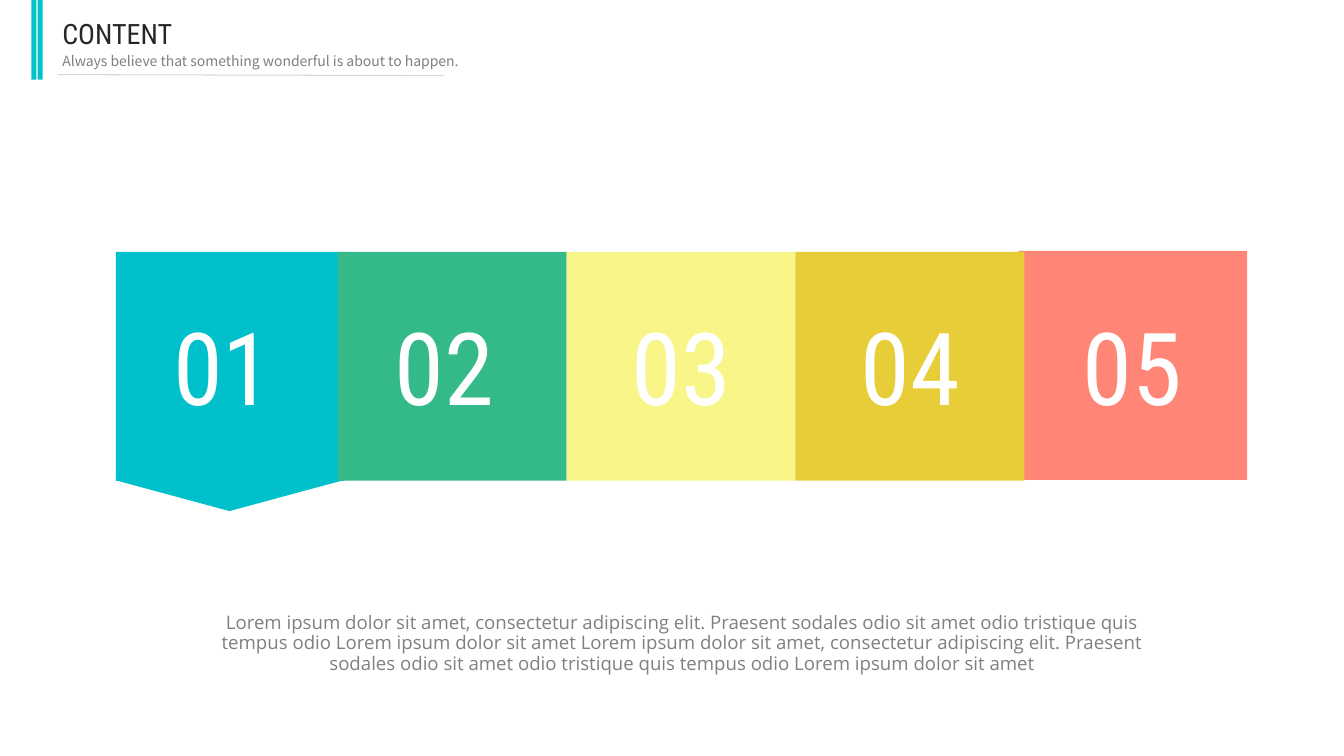
import pptx
import pptx.util
import pptx.dml.color
import pptx.enum.shapes
import pptx.enum.text
import pptx.oxml.ns
from dataclasses import dataclass
from lxml import etree

SHAPE = pptx.enum.shapes.MSO_SHAPE
ALIGN = pptx.enum.text.PP_ALIGN
ANCHOR = pptx.enum.text.MSO_ANCHOR


@dataclass(frozen=True)
class Theme:
    # Colours
    accent: str = "00C0CB"
    green: str = "34BA89"
    yellow: str = "F8F689"
    gold: str = "E7CE39"
    coral: str = "FF8577"
    white: str = "FFFFFF"
    title: str = "262626"
    subtitle: str = "7F7F7F"
    body: str = "808080"
    rule: str = "D8D8D8"
    # Fonts and type sizes
    head_font: str = "Roboto Condensed"
    sub_font: str = "Noto Sans CJK SC"
    body_font: str = "Open Sans"
    number_size: float = 72
    title_size: float = 20
    body_size: float = 13.3
    sub_size: float = 10


class SlideBuilder:
    """Places elements by percentages of the slide's width and height."""

    def __init__(self, prs, theme):
        self.prs, self.theme = prs, theme
        self.slide = prs.slides.add_slide(prs.slide_layouts[6])

    def colour(self, name):
        return pptx.dml.color.RGBColor.from_string(getattr(self.theme, name))

    def box(self, x, y, w, h):
        sw, sh = self.prs.slide_width, self.prs.slide_height
        return [round(share * side / 100)
                for share, side in ((x, sw), (y, sh), (w, sw), (h, sh))]

    def block(self, x, y, w, h, fill, kind=SHAPE.RECTANGLE, rotation=0):
        sp = self.slide.shapes.add_shape(kind, *self.box(x, y, w, h))
        sp.shadow.inherit = False
        sp.fill.solid()
        sp.fill.fore_color.rgb = self.colour(fill)
        sp.line.fill.background()
        sp.rotation = rotation

    def text(self, x, y, w, h, words, font, size, colour,
             align=ALIGN.LEFT, anchor=ANCHOR.TOP, spacing=1.0):
        tf = self.slide.shapes.add_textbox(*self.box(x, y, w, h)).text_frame
        tf.word_wrap = True
        tf.vertical_anchor = anchor
        p = tf.paragraphs[0]
        p.text = words
        p.alignment = align
        p.line_spacing = spacing
        p.font.name = getattr(self.theme, font)
        p.font.size = pptx.util.Pt(getattr(self.theme, size))
        p.font.color.rgb = self.colour(colour)

    def line(self, x1, y1, x2, y2, colour, width):
        ends = self.box(x1, y1, x2, y2)
        ln = self.slide.shapes.add_connector(
            pptx.enum.shapes.MSO_CONNECTOR.STRAIGHT, *ends)
        ln.line.color.rgb = self.colour(colour)
        ln.line.width = pptx.util.Pt(width)
        etree.SubElement(ln._element.spPr, pptx.oxml.ns.qn("a:effectLst"))


def main():
    prs = pptx.Presentation()
    prs.slide_width = pptx.util.Inches(13.33)
    prs.slide_height = pptx.util.Inches(7.5)
    s = SlideBuilder(prs, Theme())

    # Header: two bars, title, subtitle and rule
    for x in (2.33, 2.8):
        s.block(x, 0, 0.38, 10.53, "accent")
    s.text(3.9, 1.47, 31.73, 5.87, "CONTENT", "head_font", "title_size", "title")
    s.text(3.9, 6.27, 31.73, 3.6,
           "Always believe that something wonderful is about to happen.",
           "sub_font", "sub_size", "subtitle")
    s.line(4.28, 9.87, 33.08, 10, "rule", 0.75)

    # Row of five tiles; the outer two are nudged inwards, under their neighbours
    tile_w, tile_h, left, top = 17.03, 30.27, 8.1, 33.33
    tiles = [  # fill, nudge, top, inset of the number
        ("accent", 0.53, top, 2.55),
        ("green", 0, top, 2.55),
        ("yellow", 0, top, 3.15),
        ("gold", 0, top, 3.15),
        ("coral", -0.45, top - 0.13, 3.08),
    ]
    xs = [left + i * tile_w + tile[1] for i, tile in enumerate(tiles)]
    s.block(8.48, 63.47, 17.18, 4.13, "accent", SHAPE.ISOSCELES_TRIANGLE, 180)
    for i in (0, 4, 1, 2, 3):
        fill, _, y, _ = tiles[i]
        s.block(xs[i], y, tile_w, tile_h, fill)

    # Tile numbers
    for i, (x, tile) in enumerate(zip(xs, tiles), 1):
        s.text(x + tile[3], 37.87, 10.8, 20.93, f"{i:02d}", "head_font",
               "number_size", "white", ALIGN.CENTER, ANCHOR.MIDDLE)

    # Description
    s.text(14.85, 80.53, 71.87, 10.27,
           "Lorem ipsum dolor sit amet, consectetur adipiscing elit. "
           "Praesent sodales odio sit amet odio tristique quis tempus odio "
           "Lorem ipsum dolor sit amet Lorem ipsum dolor sit amet, "
           "consectetur adipiscing elit. Praesent sodales odio sit amet odio "
           "tristique quis tempus odio Lorem ipsum dolor sit amet",
           "body_font", "body_size", "body", ALIGN.CENTER, spacing=0.9)

    prs.save("out.pptx")


if __name__ == "__main__":
    main()
